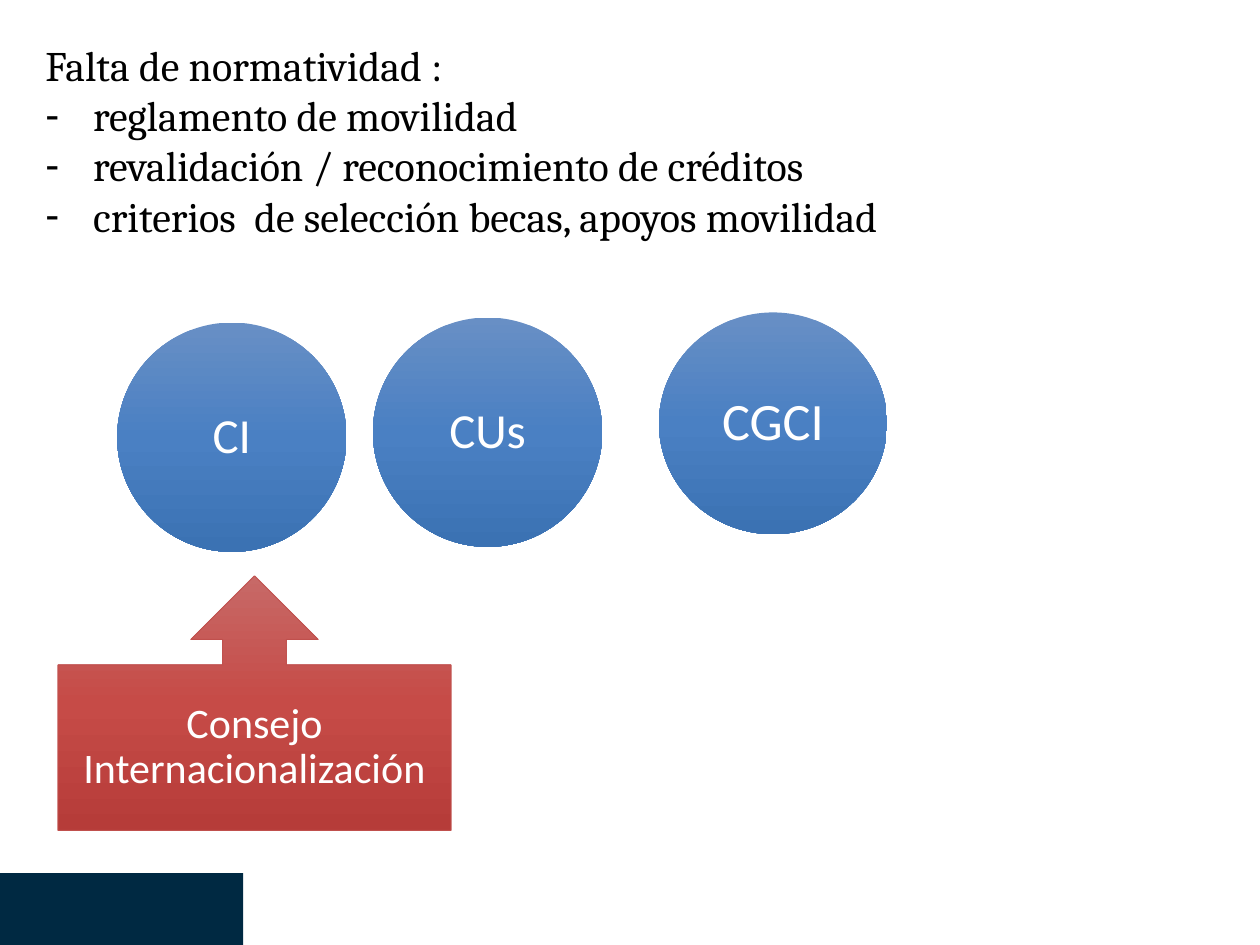
from copy import deepcopy
from dataclasses import dataclass

from lxml import etree
from pptx import Presentation
from pptx.dml.color import RGBColor
from pptx.enum.shapes import MSO_SHAPE
from pptx.enum.text import MSO_ANCHOR, MSO_AUTO_SIZE, PP_ALIGN
from pptx.oxml.ns import qn
from pptx.util import Inches, Pt

RECTANGLE = MSO_SHAPE.RECTANGLE
CIRCLE = MSO_SHAPE.OVAL
CALLOUT = MSO_SHAPE.UP_ARROW_CALLOUT
TOP, MIDDLE = MSO_ANCHOR.TOP, MSO_ANCHOR.MIDDLE
CENTER, LEFT = PP_ALIGN.CENTER, PP_ALIGN.LEFT
FIT_SHAPE = MSO_AUTO_SIZE.SHAPE_TO_FIT_TEXT


@dataclass(frozen=True)
class Theme:
    bar: str = "002942"
    blues: tuple = ("688FC5", "4A80C3", "3B72B3")
    reds: tuple = ("C76967", "C64B47", "B63C39")
    red_edge: str = "C0504D"
    text: str = "000000"
    light: str = "FFFFFF"
    list_font: str = "Cambria"
    label_font: str = "Calibri"
    body_size: int = 24
    circle_size: int = 28
    large_circle_size: int = 30


THEME = Theme()
WIDTH, HEIGHT = 10, 7.5
LIST_INDENT = 0.38

LIST_HEADING = "Falta de normatividad :"
LIST_ITEMS = (
    "reglamento de movilidad",
    "revalidación / reconocimiento de créditos",
    "criterios  de selección becas, apoyos movilidad",
)
# Label, (left, top, width, height), text size, inset
CIRCLES = (
    ("CGCI", (5.23, 2.48, 1.81, 1.76), THEME.large_circle_size, 0.12),
    ("CUs", (2.96, 2.52, 1.82, 1.82), THEME.circle_size, 0.1),
    ("CI", (0.93, 2.56, 1.82, 1.82), THEME.circle_size, 0.1),
)


def apply(target, values):
    for name, value in values.items():
        setattr(target, name, value)


def style_font(paragraph, face, size, color):
    apply(paragraph.font, {"name": face, "size": Pt(size)})
    paragraph.font.color.rgb = RGBColor.from_string(color)


def fill_gradient(shape, colors):
    """Spread the colours evenly from top to bottom."""
    fill = shape.fill
    fill.gradient()
    fill.gradient_angle = 270
    stop_list = shape._element.spPr.find(qn("a:gradFill")).find(qn("a:gsLst"))
    while len(stop_list) < len(colors):
        stop_list.append(deepcopy(stop_list[0]))
    for index, (stop, color) in enumerate(zip(fill.gradient_stops, colors)):
        stop.position = index / (len(colors) - 1)
        stop.color.rgb = RGBColor.from_string(color)


def add_block(slide, kind, box):
    shape = slide.shapes.add_shape(kind, *map(Inches, box))
    shape.shadow.inherit = False
    shape.line.fill.background()
    return shape


def add_label(shape, text, size, inset=0.1):
    frame = shape.text_frame
    sides = ("left", "right", "top", "bottom")
    apply(frame, {f"margin_{side}": Inches(inset) for side in sides})
    apply(frame, {"word_wrap": True, "vertical_anchor": MIDDLE, "text": text})
    paragraph = frame.paragraphs[0]
    apply(paragraph, {"alignment": CENTER, "line_spacing": 0.9})
    style_font(paragraph, THEME.label_font, size, THEME.light)


def set_bullet(paragraph, mark=None):
    props = paragraph._p.get_or_add_pPr()
    indent = Inches(LIST_INDENT) if mark else 0
    props.set("marL", str(indent))
    props.set("indent", str(-indent))
    if mark:
        etree.SubElement(props, qn("a:buChar")).set("char", mark)
    else:
        etree.SubElement(props, qn("a:buNone"))


def fill_list(body):
    apply(body, dict(zip(("left", "top", "width", "height"),
                         map(Inches, (0.26, 0.26, 7.43, 1.72)))))
    frame = body.text_frame
    frame.text = "\n".join((LIST_HEADING, *LIST_ITEMS))
    apply(frame, {"word_wrap": True, "vertical_anchor": TOP,
                  "auto_size": FIT_SHAPE})
    for index, paragraph in enumerate(frame.paragraphs):
        set_bullet(paragraph, "-" if index else None)
        apply(paragraph, {"alignment": LEFT, "space_before": Pt(0)})
        style_font(paragraph, THEME.list_font, THEME.body_size, THEME.text)


def add_circle(slide, label, box, size, inset):
    circle = add_block(slide, CIRCLE, box)
    fill_gradient(circle, THEME.blues)
    add_label(circle, label, size, inset)


def add_council(slide):
    council = add_block(slide, CALLOUT, (0.46, 4.57, 3.12, 2.02))
    fill_gradient(council, THEME.reds)
    council.line.color.rgb = RGBColor.from_string(THEME.red_edge)
    council.line.width = Pt(0.5)
    add_label(council, "Consejo Internacionalización", THEME.body_size)


def add_corner_bar(slide):
    bar_height = 0.57
    bar = add_block(slide, RECTANGLE,
                    (0, HEIGHT - bar_height, 1.93, bar_height))
    bar.fill.solid()
    bar.fill.fore_color.rgb = RGBColor.from_string(THEME.bar)


def main():
    deck = Presentation()
    apply(deck, {"slide_width": Inches(WIDTH), "slide_height": Inches(HEIGHT)})
    slide = deck.slides.add_slide(deck.slide_layouts[1])

    # The heading belongs to the list, so the title stays unused
    title = slide.shapes.title._element
    title.getparent().remove(title)
    fill_list(slide.placeholders[1])

    # Bodies involved and the council below them
    add_corner_bar(slide)
    for circle in CIRCLES:
        add_circle(slide, *circle)
    add_council(slide)
    deck.save("out.pptx")


if __name__ == "__main__":
    main()
